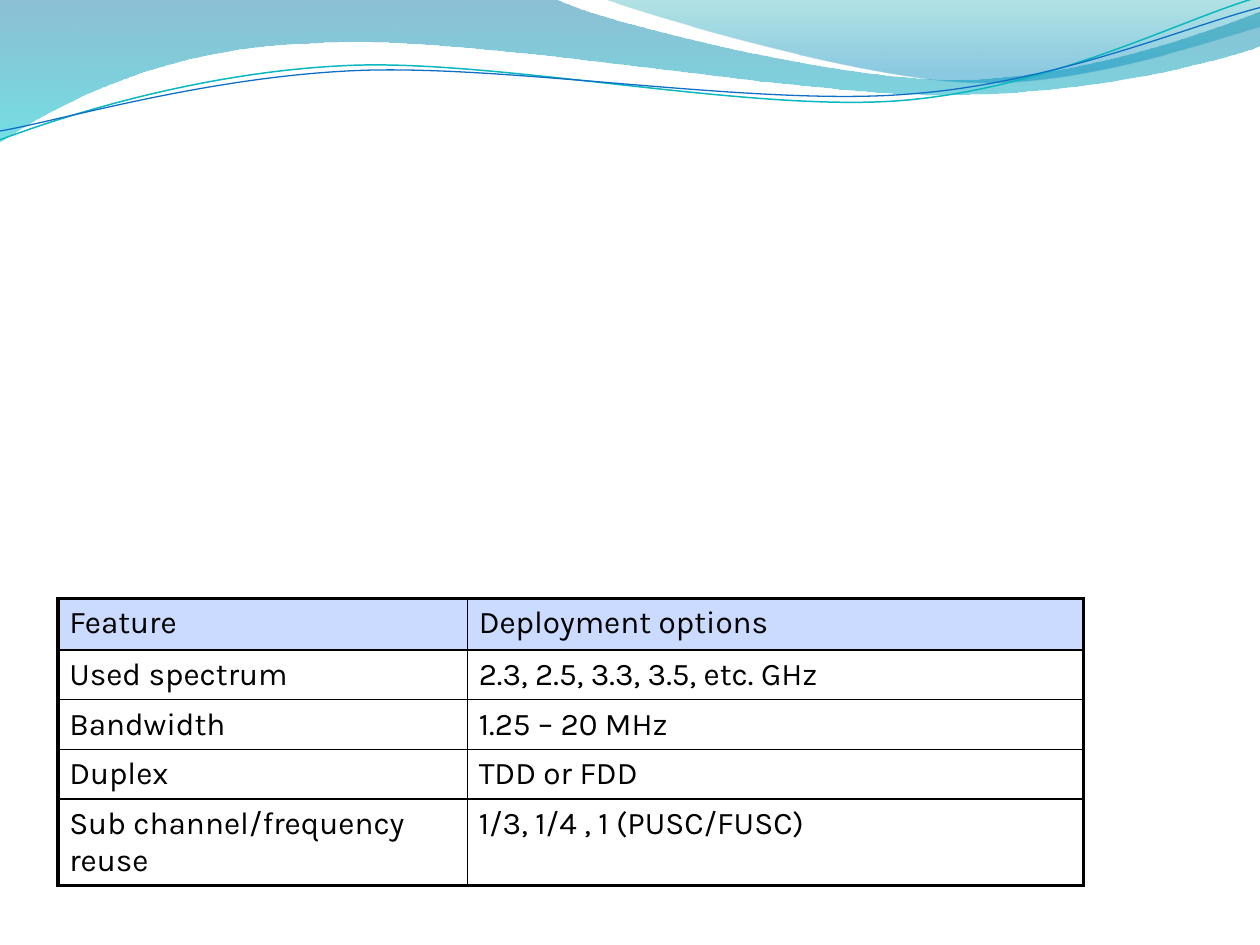
"""Build a slide with a wave banner and a table of deployment options."""
from math import cos, radians, sin

from lxml import etree
from pptx import Presentation
from pptx.dml.color import RGBColor
from pptx.oxml.ns import qn
from pptx.util import Inches, Pt

BLACK = RGBColor(0x00, 0x00, 0x00)
HEADER_FILL = RGBColor(0xCB, 0xDA, 0xFF)
DEEP_BLUE = RGBColor(0x00, 0x74, 0xA1)
CYAN = RGBColor(0x00, 0xC6, 0xCF)
TEAL = RGBColor(0x00, 0xA1, 0xA9)
SKY_BLUE = RGBColor(0x00, 0x8B, 0xBF)
TEAL_LINE = RGBColor(0x0A, 0xB8, 0xBF)
BLUE_LINE = RGBColor(0x0F, 0x6F, 0xC6)
FONT = "Karla"
TILT = -2.7
THICK, THIN = 2.25, 1


def add_wave(shapes, frame, segments, tilt=0, closed=False):
    """Add an outline of lines and Bézier curves, drawn in a tilted frame."""
    left, top, width, height = frame
    builder = shapes.build_freeform(Inches(left), Inches(top))
    builder.add_line_segments([(Inches(left + width), Inches(top + height))], close=closed)
    shape = builder.convert_to_shape()
    shape.shadow.inherit = False
    shape.rotation = tilt % 360
    outline = shape._element.xpath(".//a:pathLst/*")[0]
    for child in list(outline):
        outline.remove(child)
    cosine, sine = cos(radians(-tilt)), sin(radians(-tilt))
    for index, segment in enumerate(segments):
        tag = "a:moveTo" if index == 0 else "a:lnTo" if len(segment) == 1 else "a:cubicBezTo"
        command = etree.SubElement(outline, qn(tag))
        for x, y in segment:
            across, down = x - left - width / 2, y - top - height / 2
            etree.SubElement(
                command, qn("a:pt"),
                x=str(Inches(across * cosine - down * sine + width / 2)),
                y=str(Inches(across * sine + down * cosine + height / 2)))
    if closed:
        etree.SubElement(outline, qn("a:close"))
    return shape


def write_text(text_frame, text, *, size, color, spacing):
    """Write one paragraph, with spacing as a percentage of the line."""
    paragraph = text_frame.paragraphs[0]
    run = paragraph.add_run()
    run.text = text
    run.font.name = FONT
    run.font.size = Pt(size)
    run.font.color.rgb = color
    if spacing:
        properties = paragraph._p.get_or_add_pPr()
        for tag in ("a:spcBef", "a:spcAft"):
            gap = etree.SubElement(properties, qn(tag))
            etree.SubElement(gap, qn("a:spcPct"), val=str(spacing * 1000))


presentation = Presentation()
presentation.slide_width = Inches(10)
presentation.slide_height = Inches(7.5)
slide = presentation.slides.add_slide(presentation.slide_layouts[6])

bands = [
    ((-0.01, -0.01, 10.02, 1.14),
     [[(0, 0)],
      [(4.4, -0.01)],
      [(4.76, 0.17), (6.64, 0.63), (7.58, 0.63)],
      [(8.53, 0.63), (9.58, 0.26), (10, 0.09)],
      [(10.01, 0.36)],
      [(9.83, 0.44), (8.7, 0.76), (7.46, 0.75)],
      [(6.22, 0.75), (3.82, 0.28), (2.57, 0.34)],
      [(1.29, 0.36), (0.46, 0.83), (-0.01, 1.13)],
      [(0, 0)]],
     [(0, DEEP_BLUE, 45), (1, CYAN, 55)]),
    ((4.79, -0.01, 5.21, 0.7),
     [[(4.79, -0.01)],
      [(5.09, 0.11), (6.82, 0.62), (7.69, 0.65)],
      [(8.56, 0.69), (9.61, 0.32), (10, 0.21)],
      [(10, 0)],
      [(4.79, -0.01)]],
     [(0, TEAL, 30), (0.8, SKY_BLUE, 45)]),
]
for frame, segments, gradient in bands:
    band = add_wave(slide.shapes, frame, segments, closed=True)
    band.line.fill.background()
    band.fill.gradient()
    band.fill.gradient_angle = 270
    for stop, (position, color, opacity) in zip(band.fill.gradient_stops, gradient):
        stop.position = position
        stop.color.rgb = color
    for color_element, (_, _, opacity) in zip(
            band._element.xpath(".//a:gs/a:srgbClr"), gradient):
        etree.SubElement(color_element, qn("a:alpha"), val=str(opacity * 1000))

strands = [
    ((-0.02, 0.22, 10.02, 0.71),
     [[(0, 1.11)],
      [(0.48, 0.93), (1.58, 0.57), (2.77, 0.52)],
      [(3.95, 0.47), (5.93, 0.89), (7.13, 0.8)],
      [(8.33, 0.71), (9.38, 0.15), (9.98, -0.02)]],
     TEAL_LINE, 0.85),
    ((-0.02, 0.3, 10.03, 0.58),
     [[(0, 1.04)],
      [(0.47, 0.96), (1.64, 0.61), (2.83, 0.56)],
      [(4.03, 0.51), (5.97, 0.84), (7.17, 0.75)],
      [(8.36, 0.67), (9.41, 0.21), (10, 0.06)]],
     BLUE_LINE, 0.75),
]
strand_group = slide.shapes.add_group_shape()
for frame, segments, color, width in strands:
    strand = add_wave(strand_group.shapes, frame, segments, tilt=TILT)
    strand.fill.background()
    strand.line.color.rgb = color
    strand.line.width = Pt(width)

options = [
    ("Feature", "Deployment options"),
    ("Used spectrum", "2.3, 2.5, 3.3, 3.5, etc. GHz"),
    ("Bandwidth", "1.25 – 20 MHz"),
    ("Duplex", "TDD or FDD"),
    ("Sub channel/frequency reuse", "1/3, 1/4 , 1 (PUSC/FUSC)"),
]
column_widths = [3.25, 4.89]
row_heights = [0.41, 0.38, 0.38, 0.38, 0.47]
last_row, last_column = len(row_heights) - 1, len(column_widths) - 1
table = slide.shapes.add_table(
    len(row_heights), len(column_widths), Inches(0.46), Inches(4.75),
    Inches(sum(column_widths)), Inches(sum(row_heights))).table
table.first_row = False
table.horz_banding = False
for column, width in zip(table.columns, column_widths):
    column.width = Inches(width)
for row, height in zip(table.rows, row_heights):
    row.height = Inches(height)

for row_index, texts in enumerate(options):
    for column_index, text in enumerate(texts):
        cell = table.cell(row_index, column_index)
        cell.margin_left = cell.margin_right = Inches(0.09)
        cell.margin_top = cell.margin_bottom = Inches(0.05)
        is_final = (row_index, column_index) == (last_row, last_column)
        write_text(cell.text_frame, text, size=18, color=BLACK,
                   spacing=0 if is_final else 15)
        if row_index == 0:
            cell.fill.solid()
            cell.fill.fore_color.rgb = HEADER_FILL
        else:
            cell.fill.background()
        outer_sides = [
            ("a:lnL", column_index == 0), ("a:lnR", column_index == last_column),
            ("a:lnT", row_index == 0), ("a:lnB", row_index == last_row),
        ]
        properties = cell._tc.get_or_add_tcPr()
        for order, (tag, is_outer) in enumerate(outer_sides):
            border = etree.Element(qn(tag), w=str(Pt(THICK if is_outer else THIN)))
            border_fill = etree.SubElement(border, qn("a:solidFill"))
            etree.SubElement(border_fill, qn("a:srgbClr"), val=str(BLACK))
            properties.insert(order, border)

presentation.save("out.pptx")
